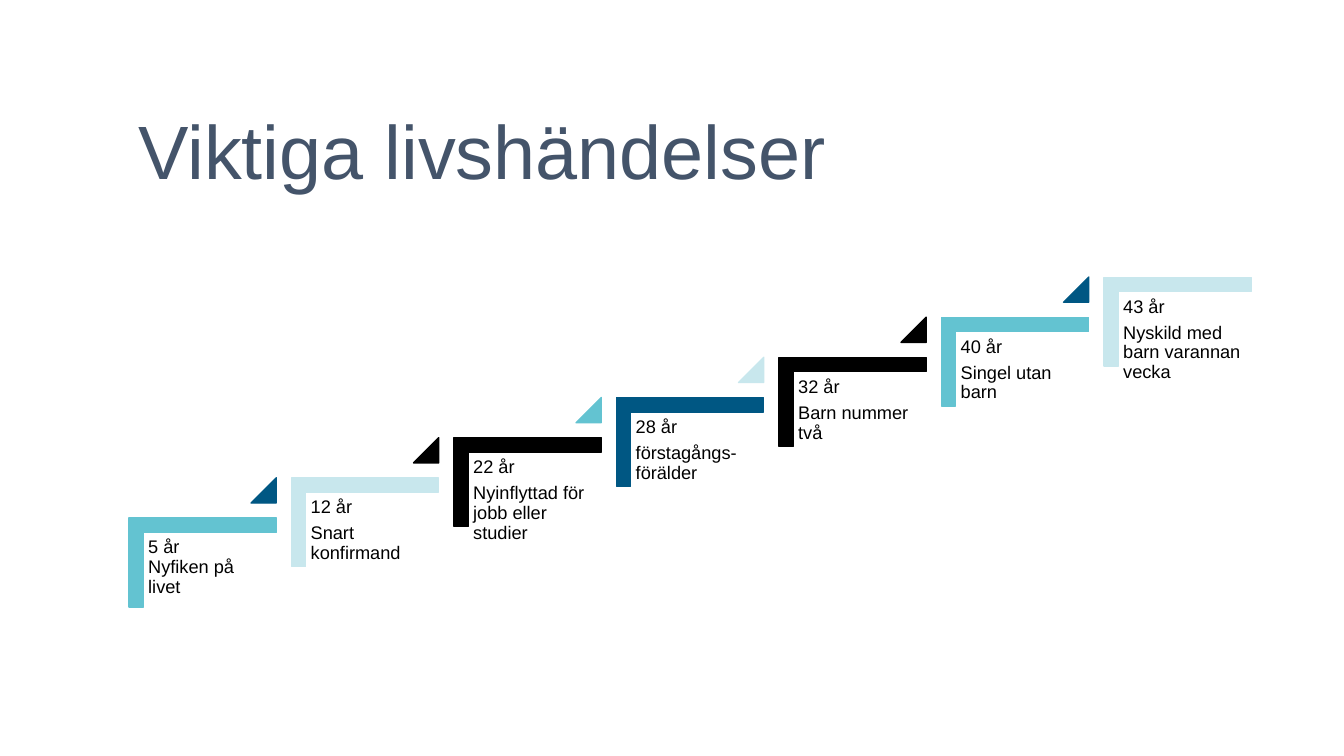
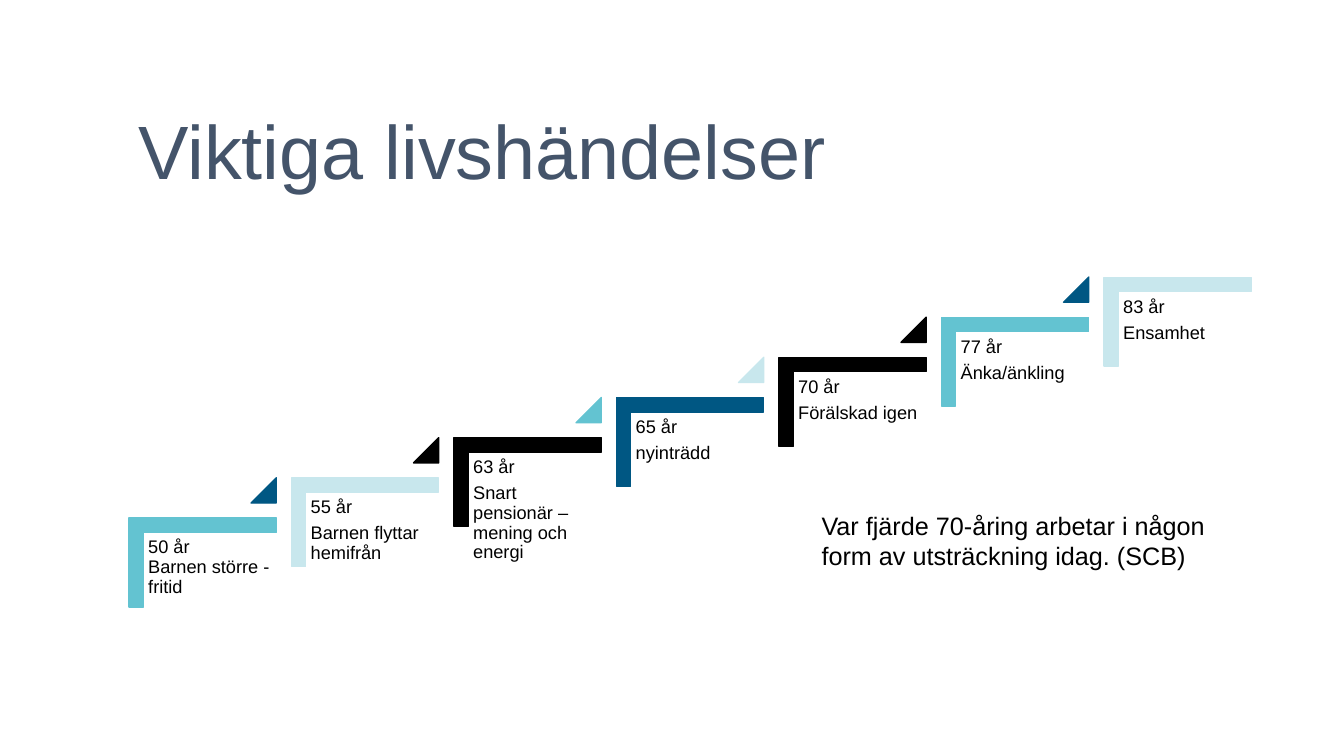
import itertools
from dataclasses import dataclass

import pptx
import pptx.dml.color
import pptx.enum.shapes
import pptx.enum.text
import pptx.util

Inches = pptx.util.Inches
Pt = pptx.util.Pt
RGB = pptx.dml.color.RGBColor.from_string
MSO_SHAPE = pptx.enum.shapes.MSO_SHAPE


@dataclass(frozen=True)
class Theme:
    font: str = "Arial"
    title_color: str = "44546A"
    text_color: str = "000000"
    # Corners and triangles take these in turn, from the lowest step up.
    accents: tuple = ("63C3D1", "005783", "C8E7ED", "000000", "000000")
    title_size: int = 54
    step_size: int = 13
    note_size: int = 18


THEME = Theme()
CORNER_W, CORNER_H, CORNER_ADJ = 0.88, 1.46, 0.16
TRIANGLE = 0.25
FIRST_X, FIRST_Y = 1.57, 4.85
LAST_X, LAST_Y = 11.24, 2.46

TITLE = "Viktiga livshändelser"
# A vertical tab is a line break within the paragraph.
STAIRCASES = [
    [
        "5 år\vNyfiken på livet",
        "12 år\nSnart konfirmand",
        "22 år\nNyinflyttad för jobb eller studier",
        "28 år\nförstagångs-förälder",
        "32 år\nBarn nummer två",
        "40 år\nSingel utan barn",
        "43 år\nNyskild med barn varannan vecka",
    ],
    [
        "50 år\vBarnen större - fritid",
        "55 år\nBarnen flyttar hemifrån",
        "63 år\nSnart pensionär – mening och energi",
        "65 år\nnyinträdd",
        "70 år\nFörälskad igen",
        "77 år\nÄnka/änkling",
        "83 år\nEnsamhet",
    ],
]


def add_accent(shapes, kind, x, y, w, h, color):
    sp = shapes.add_shape(kind, Inches(x), Inches(y), Inches(w), Inches(h))
    sp.shadow.inherit = False
    sp.fill.solid()
    sp.fill.fore_color.rgb = RGB(color)
    sp.line.color.rgb = RGB(color)
    sp.line.width = Pt(1)
    return sp


def set_text(tf, text, size, color=THEME.text_color, spacing=None, after=None):
    tf.word_wrap = True
    tf.text = text
    for p in tf.paragraphs:
        p.alignment = pptx.enum.text.PP_ALIGN.LEFT
        p.line_spacing = spacing
        p.space_after = after
        p.font.name = THEME.font
        p.font.size = Pt(size)
        p.font.color.rgb = RGB(color)


prs = pptx.Presentation()
prs.slide_width, prs.slide_height = Inches(13.33), Inches(7.5)

for steps in STAIRCASES:
    s = prs.slides.add_slide(prs.slide_layouts.get_by_name("Title Only"))
    title = s.shapes.title
    title.left, title.top = Inches(1.27), Inches(0.88)
    title.width, title.height = Inches(11.14), Inches(1.37)
    title.text_frame.auto_size = pptx.enum.text.MSO_AUTO_SIZE.NONE
    title.text_frame.vertical_anchor = pptx.enum.text.MSO_ANCHOR.MIDDLE
    set_text(title.text_frame, TITLE, THEME.title_size, THEME.title_color, spacing=0.8)

    stairs = s.shapes.add_group_shape().shapes
    colors = itertools.cycle(THEME.accents)
    last = len(steps) - 1
    for i, text in enumerate(steps):
        x = FIRST_X + i * (LAST_X - FIRST_X) / last
        y = FIRST_Y + i * (LAST_Y - FIRST_Y) / last

        corner = add_accent(stairs, MSO_SHAPE.CORNER, x, y, CORNER_W, CORNER_H, next(colors))
        corner.rotation = 90
        corner.adjustments[0] = corner.adjustments[1] = CORNER_ADJ

        label = stairs.add_textbox(Inches(x - 0.15), Inches(y + 0.44), Inches(1.32), Inches(1.15))
        tf = label.text_frame
        tf.margin_left = tf.margin_right = tf.margin_top = tf.margin_bottom = Inches(0.05)
        set_text(tf, text, THEME.step_size, spacing=0.9, after=Pt(4.5))

        if i < last:
            triangle = add_accent(stairs, MSO_SHAPE.ISOSCELES_TRIANGLE,
                                  x + 0.92, y - 0.11, TRIANGLE, TRIANGLE, next(colors))
            triangle.adjustments[0] = 1

note = s.shapes.add_textbox(Inches(8.05), Inches(5.01), Inches(4.37), Inches(0.71))
set_text(note.text_frame, "Var fjärde 70-åring arbetar i någon form av utsträckning idag. (SCB)",
         THEME.note_size)

prs.save("out.pptx")
